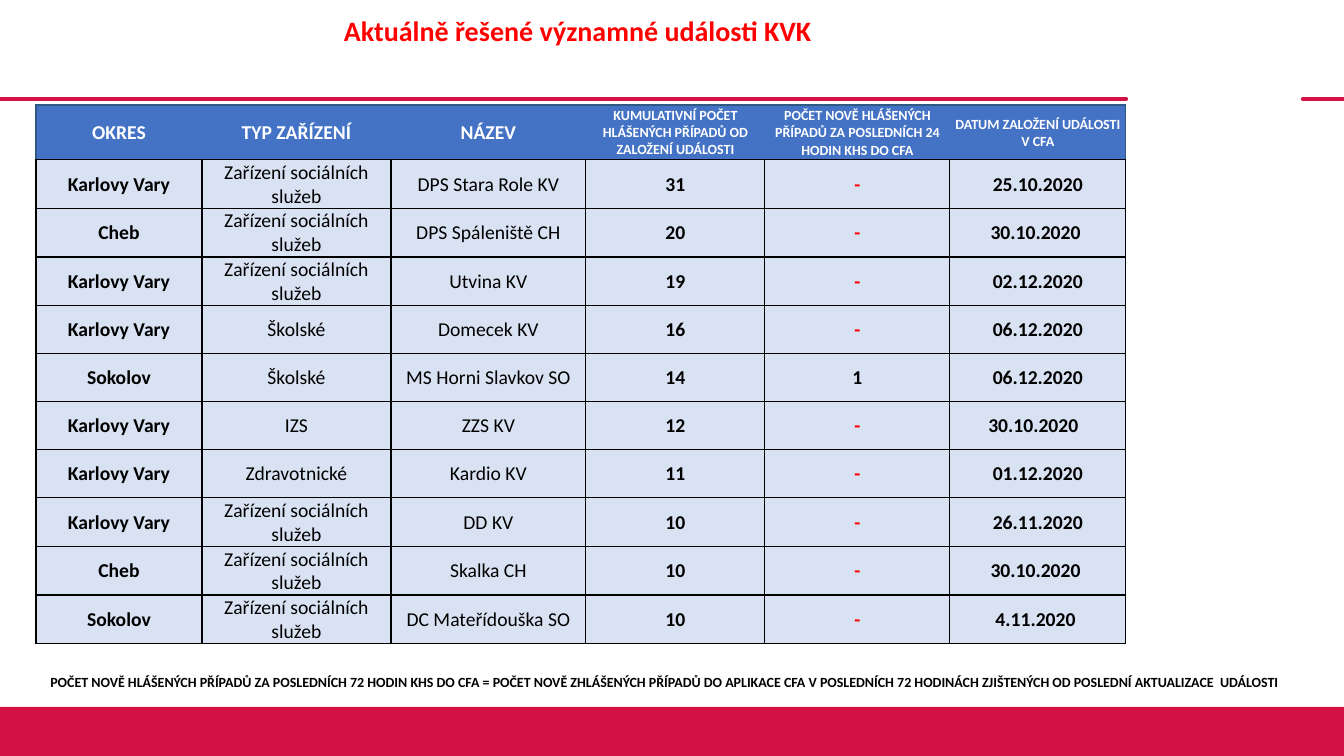
from lxml.etree import SubElement
from pptx import Presentation
from pptx.dml.color import RGBColor
from pptx.enum.shapes import MSO_CONNECTOR as Connector, MSO_SHAPE as Shape
from pptx.enum.text import MSO_ANCHOR as Anchor, PP_ALIGN as Align
from pptx.oxml.ns import qn
from pptx.util import Pt

# Content
TITLE = "Aktuálně řešené významné události KVK "
FOOTNOTE = (
    "POČET NOVĚ HLÁŠENÝCH PŘÍPADŮ ZA POSLEDNÍCH 72 HODIN KHS DO CFA = "
    "POČET NOVĚ ZHLÁŠENÝCH PŘÍPADŮ DO APLIKACE CFA V POSLEDNÍCH 72 HODINÁCH "
    "ZJIŠTENÝCH OD POSLEDNÍ AKTUALIZACE  UDÁLOSTI"
)
HEADERS = [
    "OKRES", "TYP ZAŘÍZENÍ", "NÁZEV",
    "KUMULATIVNÍ POČET HLÁŠENÝCH PŘÍPADŮ OD ZALOŽENÍ UDÁLOSTI",
    "POČET NOVĚ HLÁŠENÝCH PŘÍPADŮ ZA POSLEDNÍCH 24 HODIN KHS DO CFA",
    "DATUM ZALOŽENÍ UDÁLOSTI V CFA",
]
SOCIAL = "Zařízení sociálních služeb"
EVENTS = [
    ("Karlovy Vary", SOCIAL, "DPS Stara Role KV", "31", "-", "25.10.2020"),
    ("Cheb", SOCIAL, "DPS Spáleniště CH", "20", "-", "30.10.2020 "),
    ("Karlovy Vary", SOCIAL, "Utvina KV", "19", "-", "02.12.2020"),
    ("Karlovy Vary", "Školské", "Domecek KV", "16", "-", "06.12.2020"),
    ("Sokolov", "Školské", "MS Horni Slavkov SO", "14", "1", "06.12.2020"),
    ("Karlovy Vary", "IZS", "ZZS KV", "12", "-", "30.10.2020  "),
    ("Karlovy Vary", "Zdravotnické", "Kardio KV", "11", "-", "01.12.2020"),
    ("Karlovy Vary", SOCIAL, "DD KV", "10", "-", "26.11.2020"),
    ("Cheb", SOCIAL, "Skalka CH", "10", "-", "30.10.2020 "),
    ("Sokolov", SOCIAL, "DC Mateřídouška SO", "10", "-", "4.11.2020 "),
]

# Layout in px
WIDTH, HEIGHT = 1344, 756
TABLE_LEFT, TABLE_TOP = 36, 105
COLUMN_WIDTHS = [166, 189, 195, 179, 185, 176]
HEADER_HEIGHT, ROW_HEIGHT = 54, 48
RULE_Y, RULES = 99, [(0, 1126), (1303, WIDTH)]
BAND_TOP = 707

CRIMSON, RED, BLACK, WHITE = "D31145", "FF0000", "000000", "FFFFFF"
HEADER_FILL, HEADER_EDGE, BODY_FILL = "4472C4", "305983", "D9E2F3"


def px(length):
    return round(length * 914400 / 100.8)


def color(value):
    return RGBColor.from_string(value)


def write(text_frame, text, size, text_color, bold=True, spacing=None):
    text_frame.word_wrap = True
    text_frame.text = text
    paragraph = text_frame.paragraphs[0]
    paragraph.alignment = Align.CENTER
    if spacing:
        paragraph.line_spacing = spacing
    font = paragraph.runs[0].font
    font.name, font.size, font.bold = "Calibri", Pt(size), bold
    font.color.rgb = color(text_color)


def set_borders(cell, edges):
    properties = cell._tc.get_or_add_tcPr()
    for side, edge in zip("LRTB", edges):
        line = SubElement(properties, qn(f"a:ln{side}"), w=str(Pt(1)))
        if edge:
            fill = SubElement(line, qn("a:solidFill"))
            SubElement(fill, qn("a:srgbClr"), val=edge)
        else:
            SubElement(line, qn("a:noFill"))


def fill_cell(cell, text, fill, edges, **style):
    cell.margin_left = cell.margin_right = cell.margin_top = px(1)
    cell.margin_bottom = 0
    cell.vertical_anchor = Anchor.MIDDLE
    set_borders(cell, edges)
    cell.fill.solid()
    cell.fill.fore_color.rgb = color(fill)
    write(cell.text_frame, text, **style)


presentation = Presentation()
presentation.slide_width, presentation.slide_height = px(WIDTH), px(HEIGHT)
slide = presentation.slides.add_slide(presentation.slide_layouts[6])
shapes = slide.shapes

# Rules under the title
for start, end in RULES:
    rule = shapes.add_connector(Connector.STRAIGHT, px(start), px(RULE_Y), px(end), px(RULE_Y))
    rule.line.color.rgb = color(CRIMSON)
    rule.line.width = Pt(3)
    properties = rule._element.spPr
    properties.find(qn("a:ln")).set("cap", "rnd")
    SubElement(properties, qn("a:effectLst"))

# Bottom band
band = shapes.add_shape(Shape.RECTANGLE, 0, px(BAND_TOP), px(WIDTH), px(HEIGHT - BAND_TOP))
band.shadow.inherit = False
band.fill.solid()
band.fill.fore_color.rgb = color(CRIMSON)
band.line.fill.background()

# Table of events
table_width = sum(COLUMN_WIDTHS)
table_height = HEADER_HEIGHT + ROW_HEIGHT * len(EVENTS)
table = shapes.add_table(len(EVENTS) + 1, len(HEADERS), px(TABLE_LEFT), px(TABLE_TOP),
                         px(table_width), px(table_height)).table
table.first_row = table.horz_banding = False
for column, width in zip(table.columns, COLUMN_WIDTHS):
    column.width = px(width)
for index, row in enumerate(table.rows):
    row.height = px(ROW_HEIGHT if index else HEADER_HEIGHT)

last = len(HEADERS) - 1
for index, header in enumerate(HEADERS):
    edges = (HEADER_EDGE if index == 0 else None, HEADER_EDGE if index == last else None,
             HEADER_EDGE, BLACK)
    fill_cell(table.cell(0, index), header, HEADER_FILL, edges, size=14 if index < 3 else 10,
              text_color=WHITE, spacing=1.05 if index == 4 else None)
for row_index, event in enumerate(EVENTS, 1):
    for index, value in enumerate(event):
        fill_cell(table.cell(row_index, index), value, BODY_FILL, [BLACK] * 4, size=14,
                  text_color=RED if value == "-" else BLACK, bold=index not in (1, 2))

# Title and footnote
title = shapes.add_textbox(px(TABLE_LEFT), 0, px(table_width), px(RULE_Y))
title.text_frame.vertical_anchor = Anchor.MIDDLE
title.text_frame.margin_bottom = px(39)
write(title.text_frame, TITLE, 20, RED, spacing=0.9)

footnote = shapes.add_textbox(0, px(668), px(1328), px(27))
write(footnote.text_frame, FOOTNOTE, 10, BLACK, spacing=1.05)

presentation.save("out.pptx")
